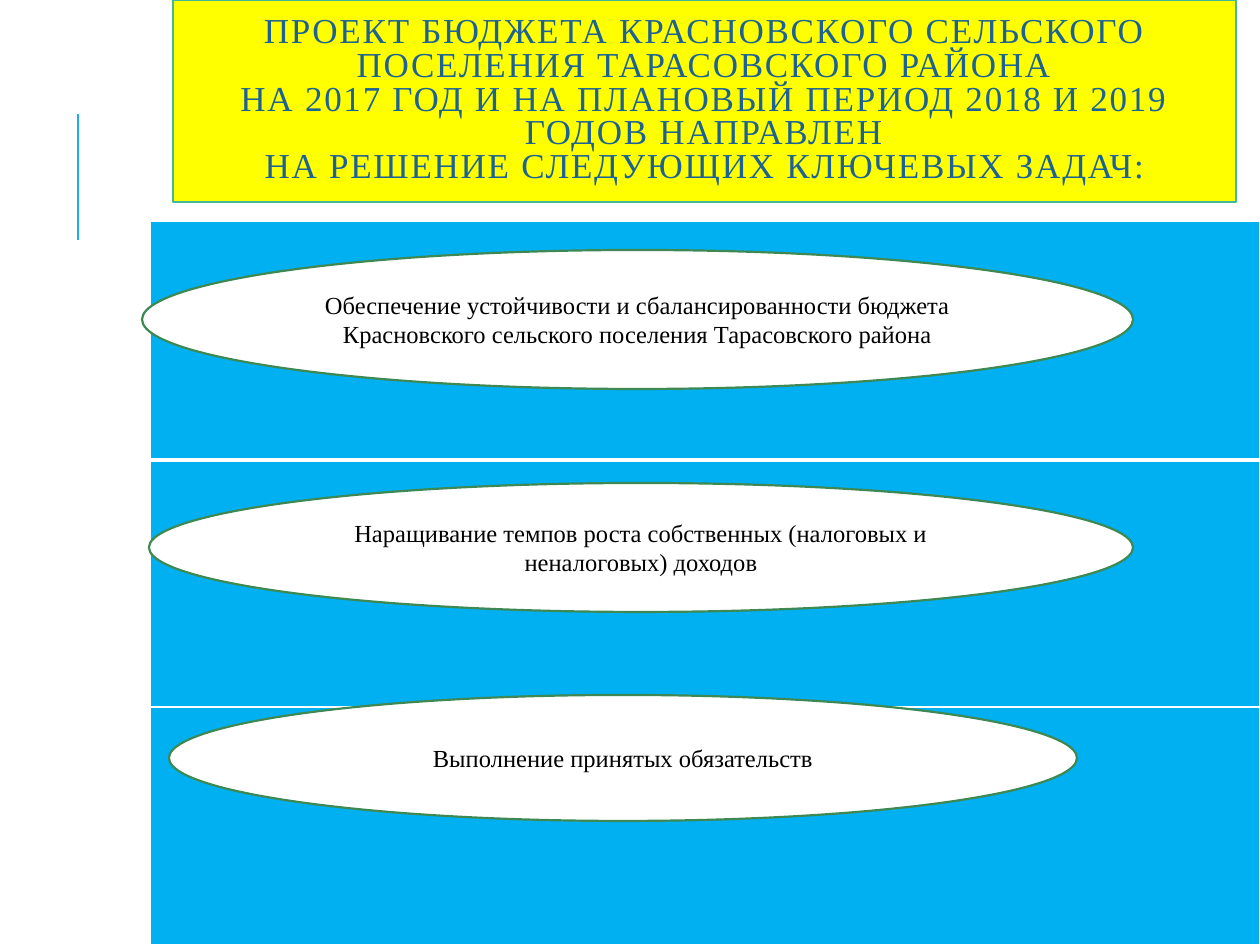
from dataclasses import dataclass

from lxml import etree
from pptx import Presentation
from pptx.dml.color import RGBColor
from pptx.enum.shapes import MSO_CONNECTOR, MSO_SHAPE
from pptx.enum.text import MSO_ANCHOR, PP_ALIGN
from pptx.oxml.ns import qn
from pptx.util import Emu, Pt

RECT, OVAL = MSO_SHAPE.RECTANGLE, MSO_SHAPE.OVAL
STRAIGHT = MSO_CONNECTOR.STRAIGHT
MIDDLE, CENTER = MSO_ANCHOR.MIDDLE, PP_ALIGN.CENTER
PX_PER_INCH = 126


@dataclass(frozen=True)
class Theme:
    font: str = "Times New Roman"
    title_size: int = 20
    body_size: int = 14
    title_text: str = "1D6294"
    title_fill: str = "FFFF00"
    title_line: str = "42BA97"
    accent: str = "1CADE4"
    band: str = "00B0F0"
    oval_line: str = "3E8853"
    white: str = "FFFFFF"
    black: str = "000000"


@dataclass(frozen=True)
class Box:
    x: int
    y: int
    w: int
    h: int
    text: str


THEME = Theme()

TITLE = Box(173, 0, 1063, 202,
            "ПРОЕКТ БЮДЖЕТА КРАСНОВСКОГО СЕЛЬСКОГО ПОСЕЛЕНИЯ ТАРАСОВСКОГО РАЙОНА\v"
            "НА 2017 ГОД И НА ПЛАНОВЫЙ ПЕРИОД 2018 И 2019 ГОДОВ НАПРАВЛЕН\v"
            "НА РЕШЕНИЕ СЛЕДУЮЩИХ КЛЮЧЕВЫХ ЗАДАЧ:")
TASKS = [
    Box(169, 695, 908, 126, "Выполнение принятых обязательств"),
    Box(142, 250, 991, 139, "Обеспечение устойчивости и сбалансированности бюджета "
                            "Красновского сельского поселения Тарасовского района"),
    Box(149, 483, 984, 129, "Наращивание темпов роста собственных (налоговых и "
                            "неналоговых) доходов"),
]
BAND_X, BAND_Y, BAND_W = 150, 221, 1110
BAND_HEIGHTS = [239, 247, 238]


def px(n: int) -> Emu:
    return Emu(round(n * 914400 / PX_PER_INCH))


def rgb(value: str) -> RGBColor:
    return RGBColor.from_string(value)


def write(tf, text: str, *, size: int, color: str, line_spacing: float = 1.0,
          tracking: int = 0) -> None:
    tf.word_wrap = True
    tf.vertical_anchor = MIDDLE
    p = tf.paragraphs[0]
    p.text = text
    p.alignment = CENTER
    p.line_spacing = line_spacing
    for r in p.runs:
        r.font.name = THEME.font
        r.font.size = Pt(size)
        r.font.color.rgb = rgb(color)
        if tracking:
            r.font._element.set("spc", str(tracking * 100))


def add_box(s, kind, box: Box, *, fill: str, line: str, weight: float, **text_format) -> None:
    sp = s.shapes.add_shape(kind, px(box.x), px(box.y), px(box.w), px(box.h))
    sp.shadow.inherit = False
    sp.fill.solid()
    sp.fill.fore_color.rgb = rgb(fill)
    sp.line.color.rgb = rgb(line)
    sp.line.width = Pt(weight)
    write(sp.text_frame, box.text, **text_format)


def add_accent_line(s, x: int, top: int, bottom: int) -> None:
    line = s.shapes.add_connector(STRAIGHT, px(x), px(bottom), px(x), px(top))
    line.line.color.rgb = rgb(THEME.accent)
    line.line.width = Pt(1.5)
    etree.SubElement(line._element.spPr, qn("a:effectLst"))


def set_borders(cell, widths: dict[str, int]) -> None:
    tc_pr = cell._tc.get_or_add_tcPr()
    for i, (side, width) in enumerate(widths.items()):
        ln = etree.Element(qn(f"a:ln{side}"), w=str(Pt(width)))
        fill = etree.SubElement(ln, qn("a:solidFill"))
        etree.SubElement(fill, qn("a:srgbClr"), val=THEME.white)
        tc_pr.insert(i, ln)


def add_bands(s) -> None:
    table = s.shapes.add_table(len(BAND_HEIGHTS), 1, px(BAND_X), px(BAND_Y),
                               px(BAND_W), px(sum(BAND_HEIGHTS))).table
    table.first_row = table.horz_banding = False
    for i, height in enumerate(BAND_HEIGHTS):
        table.rows[i].height = px(height)
        cell = table.cell(i, 0)
        cell.fill.solid()
        cell.fill.fore_color.rgb = rgb(THEME.band)
        # The first band is set apart by a thicker rule
        set_borders(cell, {"L": 1, "R": 1, "T": 3 if i == 1 else 1, "B": 3 if i == 0 else 1})


def main() -> None:
    prs = Presentation()
    prs.slide_width, prs.slide_height = px(1260), px(945)
    s = prs.slides.add_slide(prs.slide_layouts[6])

    # Heading
    add_accent_line(s, 78, 114, 240)
    add_box(s, RECT, TITLE, fill=THEME.title_fill, line=THEME.title_line, weight=0.75,
            size=THEME.title_size, color=THEME.title_text, line_spacing=0.8, tracking=1)

    # Key tasks over the blue bands
    add_bands(s)
    for task in TASKS:
        add_box(s, OVAL, task, fill=THEME.white, line=THEME.oval_line, weight=1.25,
                size=THEME.body_size, color=THEME.black)

    prs.save("out.pptx")


if __name__ == "__main__":
    main()
